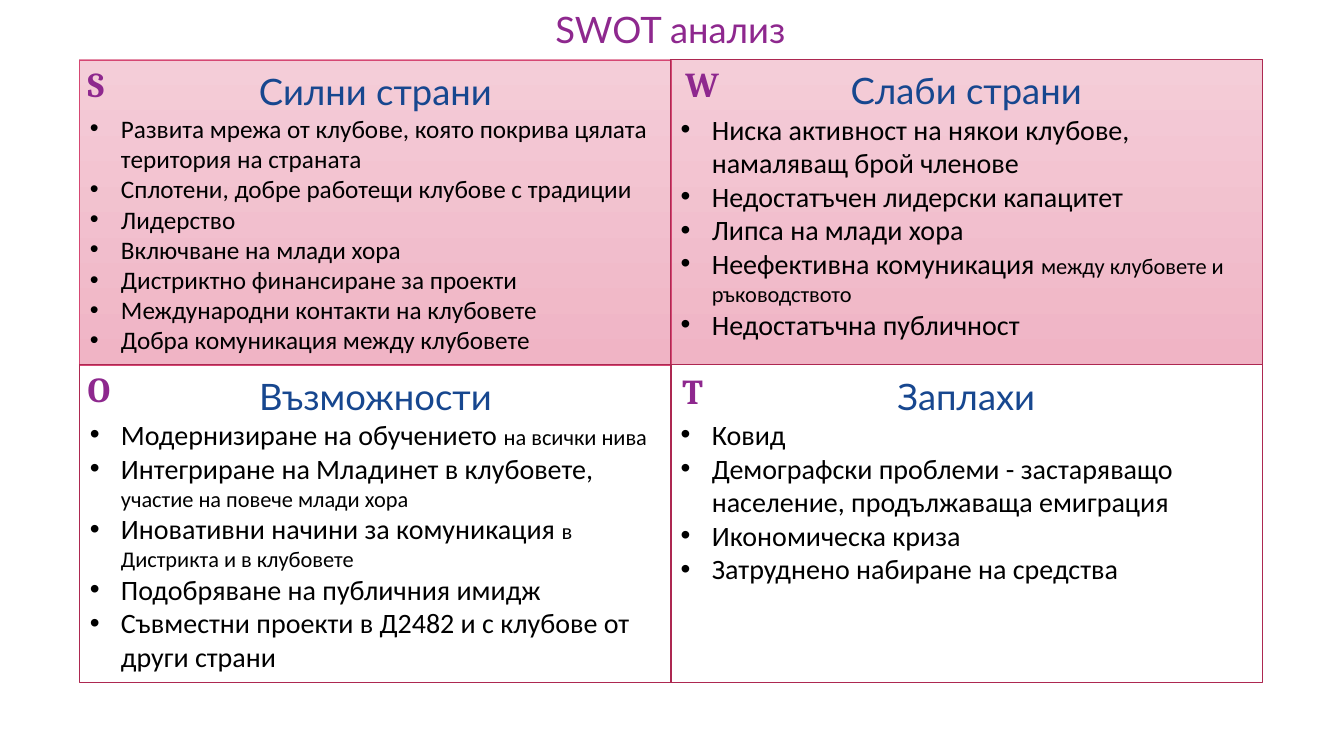
import pptx
import pptx.dml.color
import pptx.enum.shapes
import pptx.enum.text
import pptx.oxml.ns
import pptx.util
import lxml.etree

Inches = pptx.util.Inches
Pt = pptx.util.Pt
Align = pptx.enum.text.PP_ALIGN

COLORS = {
    "purple": "8E288E", "blue": "17478F", "black": "000000",
    "border": "AD2851", "bright_border": "D54773",
    "band_top": "F4CDD8", "band_bottom": "F0B4C5", "band_line": "E590AA",
}

LEFT, TOP = 0.79, 0.59
COLUMN_STEP, ROW_STEP = 5.86, 3.03
PANEL_WIDTH = 5.87
ROW_HEIGHTS = [3.03, 3.15]
INDENT = 0.31

# Each list item is its main text, optionally followed by a smaller ending
PANELS = [
    {"letter": "S", "shift": (-0.02, -0.06), "heading": "Силни страни",
     "size": 18, "border": "bright_border", "drop": 0.01,
     "items": [
         ["Развита мрежа от клубове, която покрива цялата територия на страната"],
         ["Сплотени, добре работещи клубове с традиции"],
         ["Лидерство"],
         ["Включване на млади хора"],
         ["Дистриктно финансиране за проекти"],
         ["Международни контакти на клубовете"],
         ["Добра комуникация между клубовете"]]},
    {"letter": "W", "shift": (0.05, -0.05), "heading": "Слаби страни",
     "items": [
         ["Ниска активност на някои клубове, намаляващ брой членове"],
         ["Недостатъчен лидерски капацитет"],
         ["Липса на млади хора"],
         ["Неефективна комуникация ", "между клубовете и ръководството"],
         ["Недостатъчна публичност"]]},
    {"letter": "O", "shift": (-0.02, -0.05), "heading": "Възможности",
     "items": [
         ["Модернизиране на обучението ", "на всички нива"],
         ["Интегриране на Младинет в клубовете, ", "участие на повече млади хора"],
         ["Иновативни начини за комуникация ", "в Дистрикта и в клубовете"],
         ["Подобряване на публичния имидж"],
         ["Съвместни проекти в Д2482 и с клубове от други страни"]]},
    {"letter": "T", "shift": (0.02, -0.03), "heading": "Заплахи",
     "items": [
         ["Ковид"],
         ["Демографски проблеми - застаряващо население, продължаваща емиграция"],
         ["Икономическа криза"],
         ["Затруднено набиране на средства"]]},
]


def rgb(name):
    return pptx.dml.color.RGBColor.from_string(COLORS[name])


def place(shape, left, top, width, height):
    shape.left, shape.top = Inches(left), Inches(top)
    shape.width, shape.height = Inches(width), Inches(height)


def prepare_frame(shape):
    frame = shape.text_frame
    frame.word_wrap = True
    frame.auto_size = pptx.enum.text.MSO_AUTO_SIZE.NONE
    frame.vertical_anchor = pptx.enum.text.MSO_ANCHOR.TOP
    return frame


def set_bullet(para, bulleted):
    properties = para._p.get_or_add_pPr()
    indent = Inches(INDENT) if bulleted else 0
    properties.set("marL", str(indent))
    properties.set("indent", str(-indent))
    qname = pptx.oxml.ns.qn
    if bulleted:
        lxml.etree.SubElement(properties, qname("a:buFont")).set("typeface", "Arial")
        lxml.etree.SubElement(properties, qname("a:buChar")).set("char", "•")
    else:
        lxml.etree.SubElement(properties, qname("a:buNone"))


def write(para, texts, sizes, font="Calibri", color="black", bold=False,
          align=Align.LEFT, spacing=1.0, bulleted=False):
    set_bullet(para, bulleted)
    para.alignment = align
    para.line_spacing = spacing
    para.space_before = para.space_after = Pt(0)
    for text, size in zip(texts, sizes):
        span = para.add_run()
        span.text = text
        span.font.name = font
        span.font.size = Pt(size)
        span.font.bold = bold
        span.font.color.rgb = rgb(color)


def add_title(page, left, top, width, height):
    title = page.shapes.title
    place(title, left, top, width, height)
    write(prepare_frame(title).paragraphs[0], ["SWOT анализ"], [26],
          font="Lato", color="purple", align=Align.CENTER, spacing=1.07)


def add_band(page, left, top, width, height):
    band = page.shapes.add_shape(
        pptx.enum.shapes.MSO_SHAPE.RECTANGLE,
        Inches(left), Inches(top), Inches(width), Inches(height))
    band.shadow.inherit = False
    band.fill.gradient()
    band.fill.gradient_angle = 270
    for stop, name in zip(band.fill.gradient_stops, ["band_top", "band_bottom"]):
        stop.color.rgb = rgb(name)
    band.line.color.rgb = rgb("band_line")
    band.line.width = Pt(0.5)
    # Send the band behind the text
    band.element.getparent().insert(2, band.element)


def fill_panel(page, body, panel, left, top, width, height):
    # Bordered list under a centred heading
    place(body, left, top, width, height)
    body.line.color.rgb = rgb(panel.get("border", "border"))
    body.line.width = Pt(0.75)
    frame = prepare_frame(body)
    write(frame.paragraphs[0], [panel["heading"]], [26], font="Lato",
          color="blue", align=Align.CENTER, spacing=Pt(34))
    for item in panel["items"]:
        write(frame.add_paragraph(), item, [panel.get("size", 20), 16], bulleted=True)

    # Letter in the corner
    across, down = panel["shift"]
    corner = page.shapes.add_textbox(
        Inches(left + across), Inches(top + down), Inches(0.5), Inches(0.52))
    write(prepare_frame(corner).paragraphs[0], [panel["letter"]], [25],
          font="Cambria", color="purple", bold=True, spacing=1.07)


def build_swot(deck):
    page = deck.slides.add_slide(deck.slide_layouts.get_by_name("Comparison"))
    add_title(page, 5.3, -0.01, 2.7, 0.54)
    add_band(page, LEFT, TOP, 2 * COLUMN_STEP + 0.01, ROW_HEIGHTS[0])
    bodies = [shape for shape in page.placeholders
              if shape.placeholder_format.idx > 0]
    for index, (body, panel) in enumerate(zip(bodies, PANELS)):
        row, column = divmod(index, 2)
        fill_panel(page, body, panel, LEFT + column * COLUMN_STEP,
                   TOP + row * ROW_STEP + panel.get("drop", 0),
                   PANEL_WIDTH, ROW_HEIGHTS[row])


def main():
    deck = pptx.Presentation()
    deck.slide_width, deck.slide_height = Inches(13.33), Inches(7.5)
    build_swot(deck)
    deck.save("out.pptx")


if __name__ == "__main__":
    main()
